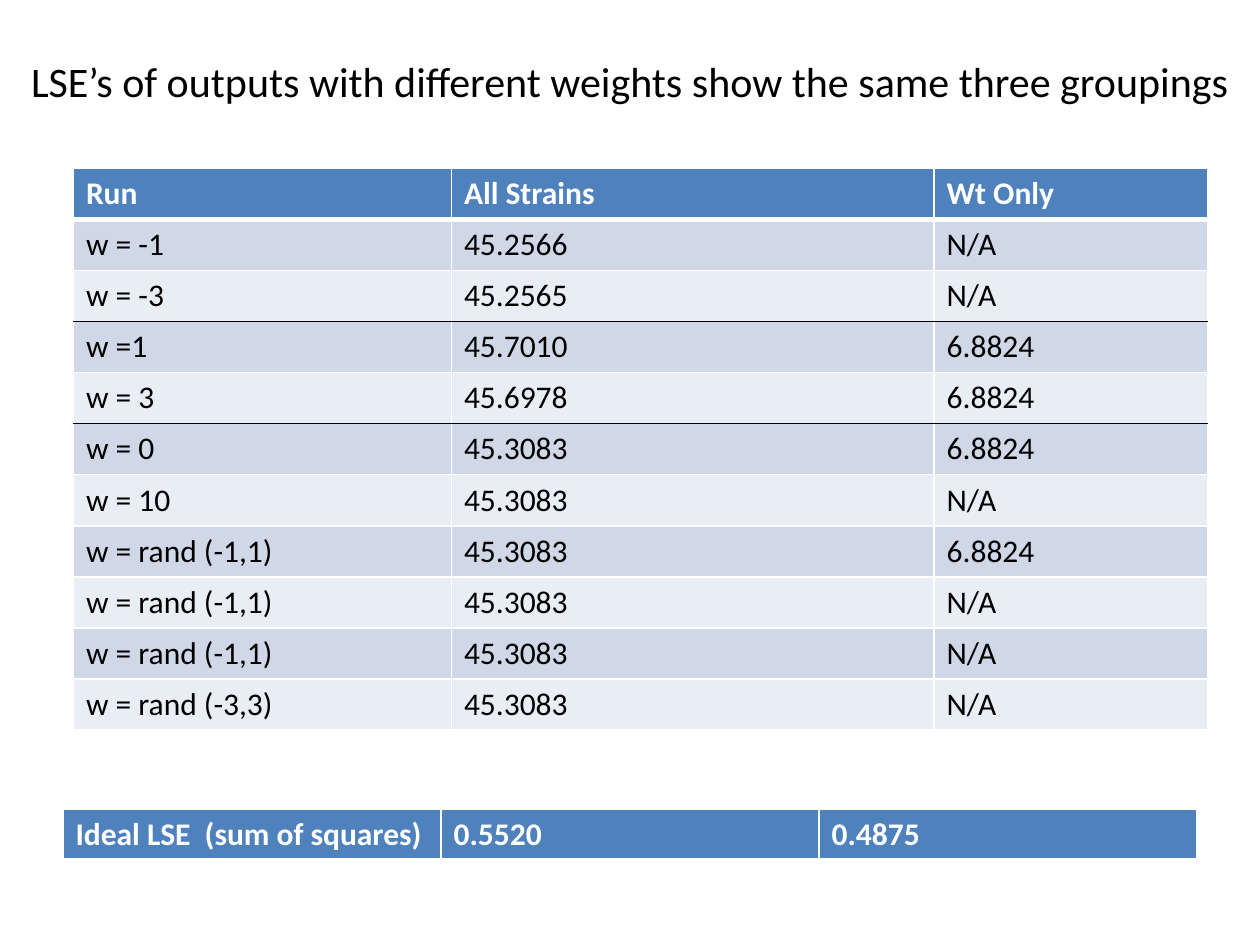
from dataclasses import dataclass

from lxml import etree
from pptx import Presentation
from pptx.dml.color import RGBColor
from pptx.enum.text import MSO_ANCHOR, PP_ALIGN
from pptx.oxml.ns import qn
from pptx.util import Cm, Pt

MIDDLE = MSO_ANCHOR.MIDDLE
CENTER = PP_ALIGN.CENTER

# Content
TITLE = "LSE’s of outputs with different weights show the same three groupings"
RUNS = [
    ("Run", "All Strains", "Wt Only"),
    ("w = -1", "45.2566", "N/A"),
    ("w = -3", "45.2565", "N/A"),
    ("w =1", "45.7010", "6.8824"),
    ("w = 3", "45.6978", "6.8824"),
    ("w = 0", "45.3083", "6.8824"),
    ("w = 10", "45.3083", "N/A"),
    ("w = rand (-1,1)", "45.3083", "6.8824"),
    ("w = rand (-1,1)", "45.3083", "N/A"),
    ("w = rand (-1,1)", "45.3083", "N/A"),
    ("w = rand (-3,3)", "45.3083", "N/A"),
]
GROUP_ENDS = (2, 4)  # rows with a dark rule beneath
IDEAL = [("Ideal LSE  (sum of squares)", "0.5520", "0.4875")]


@dataclass(frozen=True)
class Theme:
    font: str = "Calibri"
    title_size: int = 24
    cell_size: int = 18
    text: str = "000000"
    light: str = "FFFFFF"
    header: str = "4F81BD"
    bands: tuple = ("E9EDF4", "D0D8E8")  # even rows, odd rows


THEME = Theme()
ROW_HEIGHT = Cm(1.03)


def style_text(para, size, color, bold=False):
    for span in para.runs:
        span.font.name = THEME.font
        span.font.size = Pt(size)
        span.font.bold = bold
        span.font.color.rgb = RGBColor.from_string(color)


def add_border(cell, side, color, width):
    properties = cell._tc.get_or_add_tcPr()
    line = etree.SubElement(properties, qn(f"a:ln{side}"), w=str(Pt(width)))
    fill = etree.SubElement(line, qn("a:solidFill"))
    etree.SubElement(fill, qn("a:srgbClr"), val=color)


def rule_below(row, group_ends):
    """Colour and width of the horizontal rule under a row."""
    if row == 0:
        return THEME.light, 3
    return (THEME.text if row in group_ends else THEME.light), 1


def add_grid(page, rows, left, top, widths, group_ends=()):
    frame = page.shapes.add_table(len(rows), len(widths), left, top,
                                  sum(widths), ROW_HEIGHT * len(rows))
    table = frame.table
    table.horz_banding = False
    for column, width in zip(table.columns, widths):
        column.width = width

    for r, values in enumerate(rows):
        table.rows[r].height = ROW_HEIGHT
        is_header = r == 0
        above = (THEME.light, 1) if is_header else rule_below(r - 1, group_ends)
        borders = {"L": (THEME.light, 1), "R": (THEME.light, 1),
                   "T": above, "B": rule_below(r, group_ends)}
        fill = THEME.header if is_header else THEME.bands[r % 2]
        color = THEME.light if is_header else THEME.text
        for c, value in enumerate(values):
            cell = table.cell(r, c)
            cell.text_frame.text = value
            style_text(cell.text_frame.paragraphs[0], THEME.cell_size, color, is_header)
            # Borders must come before the fill in the cell properties
            for side, (line_color, line_width) in borders.items():
                add_border(cell, side, line_color, line_width)
            cell.fill.solid()
            cell.fill.fore_color.rgb = RGBColor.from_string(fill)


def add_title(page, width):
    box = page.shapes.add_textbox(0, Cm(0.03), width, Cm(3.18))
    text_frame = box.text_frame
    text_frame.word_wrap = True
    text_frame.vertical_anchor = MIDDLE
    text_frame.text = TITLE
    para = text_frame.paragraphs[0]
    para.alignment = CENTER
    style_text(para, THEME.title_size, THEME.text)


def main():
    deck = Presentation()
    deck.slide_width, deck.slide_height = Cm(25.4), Cm(19.05)
    page = deck.slides.add_slide(deck.slide_layouts[6])

    add_title(page, deck.slide_width)
    # Results of each run, ruled into three groups
    add_grid(page, RUNS, Cm(1.48), Cm(3.39),
             [Cm(7.62), Cm(9.73), Cm(5.51)], GROUP_ENDS)
    # Ideal values for comparison
    add_grid(page, IDEAL, Cm(1.27), Cm(16.31), [Cm(7.62)] * 3)

    deck.save("out.pptx")


if __name__ == "__main__":
    main()
